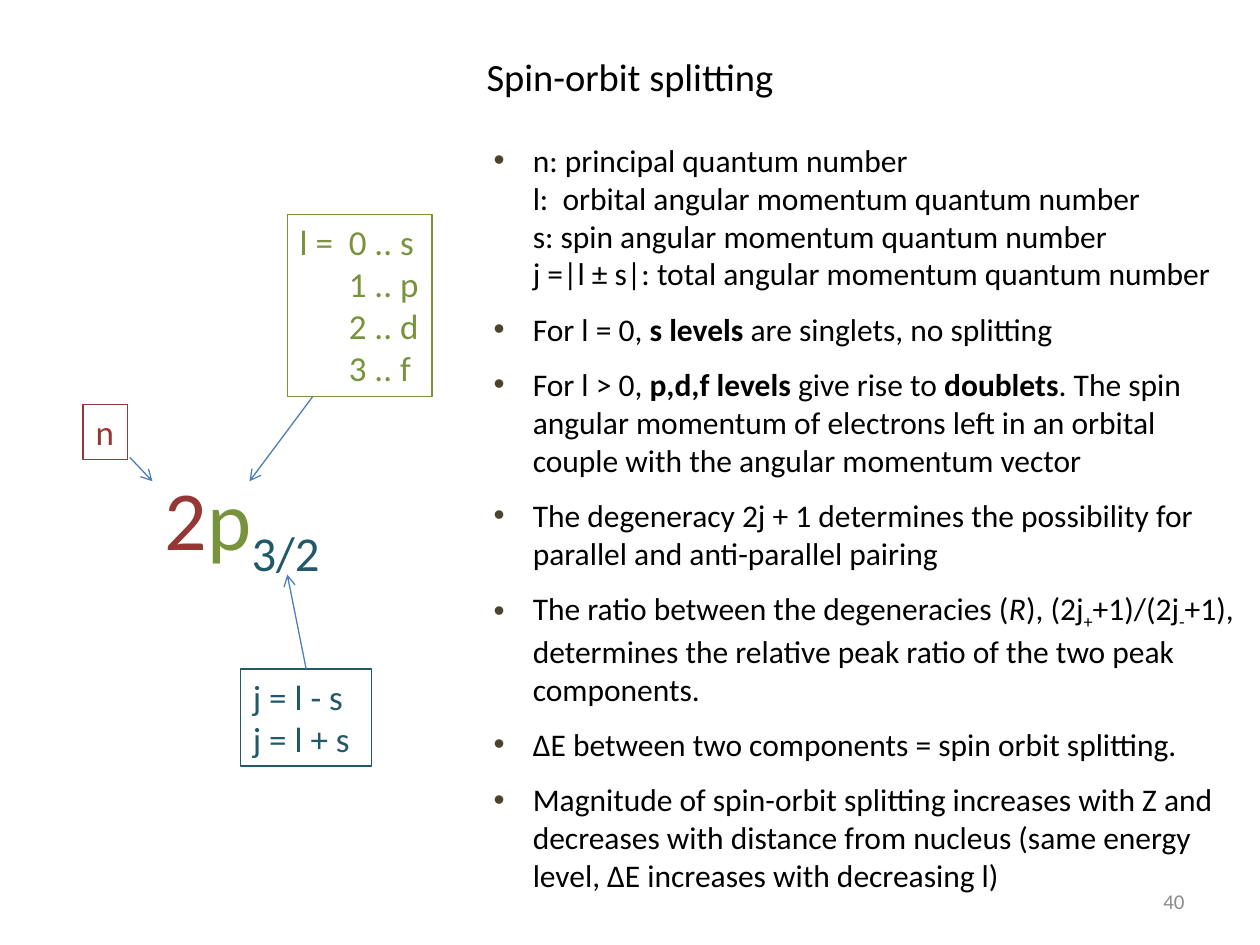
"""Build a slide that explains spin-orbit splitting and its level notation."""
from pptx import Presentation
from pptx import util as u
from pptx.dml.color import RGBColor
from pptx.enum import shapes, text
from pptx.oxml.ns import qn
from lxml import etree

FONT = "Calibri"
COLORS = {
    "text": "000000",
    "bullet": "4A452A",
    "n": "953735",
    "l": "77933C",
    "j": "215968",
    "arrow": "4B7EBC",
    "number": "8C8C8C",
}
BULLETS = [
    [("n: principal quantum number\n"
      "l:  orbital angular momentum quantum number\n"
      "s: spin angular momentum quantum number\n"
      "j =|l ± s|: total angular momentum quantum number", "")],
    [("For l = 0, ", ""), ("s levels ", "bold"), ("are singlets, no splitting", "")],
    [("For l > 0, ", ""), ("p,d,f levels ", "bold"), ("give rise to ", ""),
     ("doublets", "bold"),
     (". The spin angular momentum of electrons left in an orbital "
      "couple with the angular momentum vector", "")],
    [("The degeneracy 2j + 1 determines the possibility for "
      "parallel and anti-parallel pairing", "")],
    [("The ratio between the degeneracies (", ""), ("R", "italic"), ("), (2j", ""),
     ("+", "sub"), ("+1)/(2j", ""), ("-", "sub"),
     ("+1), determines the relative peak ratio of the two peak components.", "")],
    [("ΔE between two components = spin orbit splitting.", "")],
    [("Magnitude of spin-orbit splitting increases with Z and decreases with "
      "distance from nucleus (same energy level, ΔE increases with decreasing l)", "")],
]


def rgb(name):
    return RGBColor.from_string(COLORS[name])


def add_text(p, content, size, color, style=""):
    for i, line in enumerate(content.split("\n")):
        if i:
            p.add_line_break()
        r = p.add_run()
        r.text = line
        r.font.name = FONT
        r.font.size = u.Pt(size)
        r.font.color.rgb = rgb(color)
        if style == "bold":
            r.font.bold = True
        elif style == "italic":
            r.font.italic = True
        elif style == "sub":
            r.font._element.set("baseline", "-25000")


def set_indent(p, indent):
    pPr = p._p.get_or_add_pPr()
    pPr.set("marL", str(u.Inches(indent)))
    pPr.set("indent", str(-u.Inches(indent)))
    return pPr


def add_bullet(p):
    pPr = set_indent(p, 0.31)
    color = etree.SubElement(pPr, qn("a:buClr"))
    etree.SubElement(color, qn("a:srgbClr"), val=COLORS["bullet"])
    etree.SubElement(pPr, qn("a:buFont"), typeface="Arial")
    etree.SubElement(pPr, qn("a:buChar"), char="•")


def add_box(s, at, wrap=True, anchor=text.MSO_ANCHOR.TOP):
    sp = s.shapes.add_textbox(*map(u.Inches, at))
    tf = sp.text_frame
    tf.word_wrap = wrap
    tf.vertical_anchor = anchor
    return tf


def add_line_of_text(s, at, content, size, color, align):
    p = add_box(s, at, anchor=text.MSO_ANCHOR.MIDDLE).paragraphs[0]
    p.alignment = align
    add_text(p, content, size, color)


def add_bullets(s, at):
    tf = add_box(s, at)
    for i, runs in enumerate(BULLETS):
        p = tf.add_paragraph() if i else tf.paragraphs[0]
        p.space_after = u.Pt(10)
        add_bullet(p)
        for content, style in runs:
            add_text(p, content, 18, "text", style)


def add_notation(s, at):
    p = add_box(s, at, wrap=False).paragraphs[0]
    for content, color, style in [("2", "n", ""), ("p", "l", ""), ("3/2", "j", "sub")]:
        add_text(p, content, 48, color, style)


def add_label(s, at, paragraphs, color, indent=0):
    sp = s.shapes.add_shape(shapes.MSO_SHAPE.RECTANGLE, *map(u.Inches, at))
    sp.shadow.inherit = False
    sp.fill.background()
    sp.line.color.rgb = rgb(color)
    sp.line.width = u.Pt(0.75)
    tf = sp.text_frame
    tf.word_wrap = False
    tf.vertical_anchor = text.MSO_ANCHOR.TOP
    for i, content in enumerate(paragraphs):
        p = tf.add_paragraph() if i else tf.paragraphs[0]
        p.alignment = text.PP_ALIGN.LEFT
        if indent:
            set_indent(p, indent)
        add_text(p, content, 20, color)
    return sp


def add_arrow(s, start, end):
    cxn = s.shapes.add_connector(
        shapes.MSO_CONNECTOR.STRAIGHT, *map(u.Inches, start + end))
    cxn.line.color.rgb = rgb("arrow")
    cxn.line.width = u.Pt(0.75)
    etree.SubElement(cxn.line._get_or_add_ln(), qn("a:tailEnd"), type="arrow")
    etree.SubElement(cxn._element.spPr, qn("a:effectLst"))
    return cxn


def main():
    prs = Presentation()
    prs.slide_width, prs.slide_height = u.Inches(10), u.Inches(7.5)
    s = prs.slides.add_slide(prs.slide_layouts[6])
    add_line_of_text(s, (0.5, 0.3, 9, 0.61), "Spin-orbit splitting", 22, "text",
                     text.PP_ALIGN.CENTER)
    add_bullets(s, (3.82, 1.07, 6.18, 6.09))
    add_notation(s, (1.21, 3.65, 1.53, 0.91))
    j_label = add_label(s, (1.91, 5.31, 1.04, 0.77), ["j = l - s", "j = l + s"], "j")
    add_label(s, (2.28, 1.7, 1.15, 1.45), ["l =\t0 .. s\n1 .. p\n2 .. d\n3 .. f"], "l",
              indent=0.39)
    add_label(s, (0.66, 3.21, 0.35, 0.44), ["n"], "n")
    add_arrow(s, (1.03, 3.63), (1.21, 3.82))
    add_arrow(s, (2.48, 3.15), (1.98, 3.82))
    add_arrow(s, (2.43, 5.31), (2.28, 4.56)).begin_connect(j_label, 0)
    add_line_of_text(s, (7.17, 6.95, 2.33, 0.4), "40", 12, "number",
                     text.PP_ALIGN.RIGHT)
    prs.save("out.pptx")


if __name__ == "__main__":
    main()
